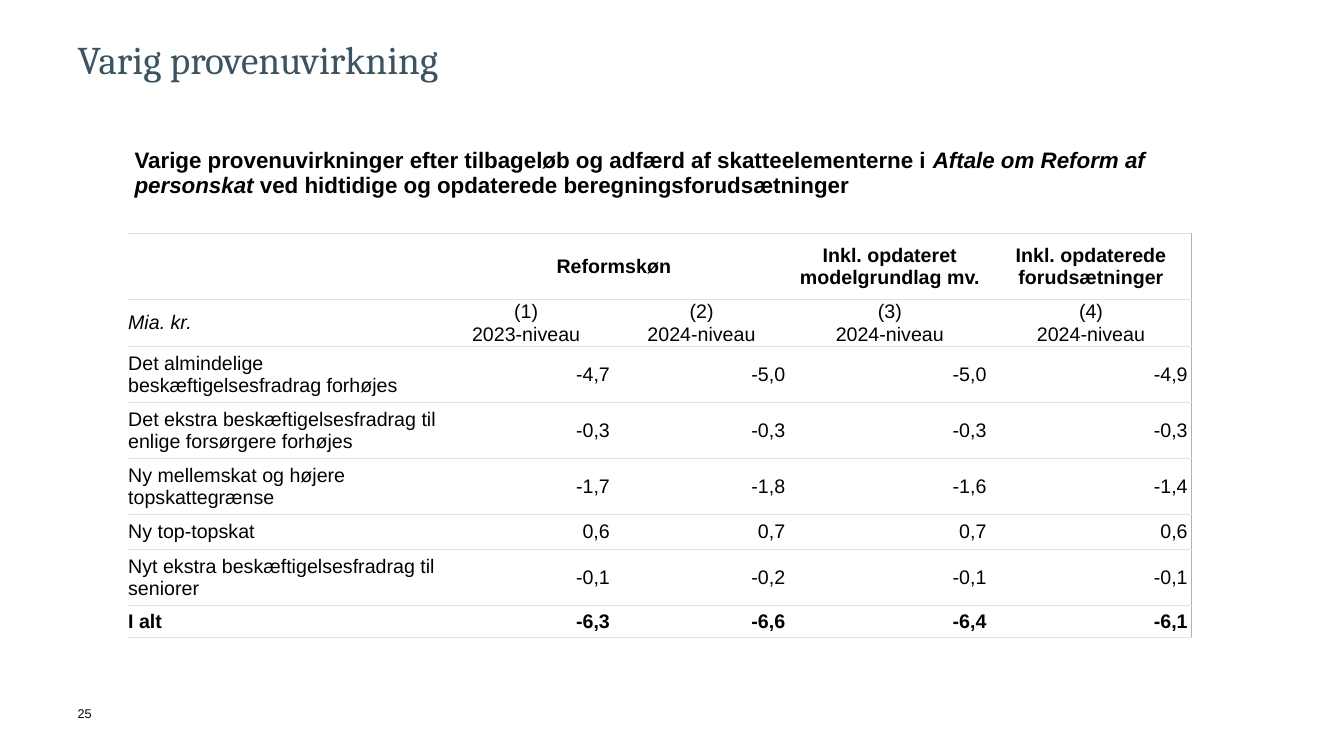
from dataclasses import dataclass

from lxml.etree import SubElement
from pptx import Presentation
from pptx.dml.color import RGBColor
from pptx.enum.text import MSO_ANCHOR as Anchor, PP_ALIGN as Align
from pptx.oxml.ns import qn
from pptx.util import Cm, Pt

NO_STYLE = "{2D5ABB26-0587-4C30-8999-92F81FD0307C}"


@dataclass(frozen=True)
class Theme:
    title_font: str = "Cambria"
    body_font: str = "Arial"
    title_color: str = "3B5463"
    text_color: str = "000000"
    rule_color: str = "E4E2D9"
    edge_color: str = "B5B1B1"
    title_size: int = 28
    heading_size: int = 16
    table_size: int = 14
    number_size: int = 9


class SlideBuilder:
    def __init__(self, slide, theme):
        self.slide = slide
        self.theme = theme

    def format_runs(self, paragraph, size, font=None, color=None, bold=False, italic=False):
        for run in paragraph.runs:
            run.font.name = font or self.theme.body_font
            run.font.size = Pt(size)
            run.font.bold = bold
            run.font.italic = italic
            run.font.color.rgb = RGBColor.from_string(color or self.theme.text_color)

    def text(self, left, top, width, height, text, size, font=None, color=None):
        frame = self.slide.shapes.add_textbox(Cm(left), Cm(top), Cm(width), Cm(height)).text_frame
        frame.word_wrap = True
        frame.margin_left = frame.margin_top = frame.margin_right = frame.margin_bottom = 0
        frame.text = text
        self.format_runs(frame.paragraphs[0], size, font, color)
        return frame.paragraphs[0]

    def table(self, left, top, widths, heights):
        shape = self.slide.shapes.add_table(
            len(heights), len(widths), Cm(left), Cm(top), Cm(sum(widths)), Cm(sum(heights)))
        table = shape.table
        table.first_row = table.horz_banding = False
        table._tbl.tblPr.find(qn("a:tableStyleId")).text = NO_STYLE
        for column, width in zip(table.columns, widths):
            column.width = Cm(width)
        for row, height in zip(table.rows, heights):
            row.height = Cm(height)
        return table

    def cell(self, cell, text, align=Align.LEFT, indent=0, bold=False, italic=False):
        cell.margin_left = cell.margin_top = cell.margin_right = cell.margin_bottom = 0
        cell.vertical_anchor = Anchor.MIDDLE
        cell.text_frame.text = text
        for paragraph in cell.text_frame.paragraphs:
            paragraph.alignment = align
            properties = paragraph._p.get_or_add_pPr()
            properties.set("marL", str(Cm(indent)))
            properties.set("marR", str(Cm(indent)))
            self.format_runs(paragraph, self.theme.table_size, bold=bold, italic=italic)

    def borders(self, cell, right_edge):
        sides = {"a:lnT": self.theme.rule_color, "a:lnB": self.theme.rule_color}
        if right_edge:
            sides = {"a:lnR": self.theme.edge_color, **sides}
        properties = cell._tc.get_or_add_tcPr()
        for side, color in sides.items():
            line = SubElement(properties, qn(side), w=str(Pt(1)))
            SubElement(SubElement(line, qn("a:solidFill")), qn("a:srgbClr"), val=color)
        cell.fill.background()

    def heading(self, left, top, width, height, parts):
        cell = self.table(left, top, [width], [height]).cell(0, 0)
        cell.margin_left = cell.margin_right = Cm(0.25)
        cell.margin_top = cell.margin_bottom = 0
        cell.fill.background()
        paragraph = cell.text_frame.paragraphs[0]
        paragraph._p.get_or_add_pPr().set("marL", str(Cm(0.4)))
        for text, _ in parts:
            paragraph.add_run().text = text
        self.format_runs(paragraph, self.theme.heading_size, bold=True)
        for run, (_, italic) in zip(paragraph.runs, parts):
            run.font.italic = italic

    def revenue_table(self, left, top, widths, heights, rows):
        table = self.table(left, top, widths, heights)
        last_row, last_column = len(rows) - 1, len(widths) - 1
        for r, row in enumerate(rows):
            for c, text in enumerate(row):
                if c == 0:
                    align, indent = Align.LEFT, 0
                else:
                    align, indent = (Align.CENTER if r < 2 else Align.RIGHT), 0.1
                cell = table.cell(r, c)
                self.cell(cell, text, align, indent,
                          bold=r in (0, last_row), italic=(r, c) == (1, 0))
                self.borders(cell, c == last_column)
        table.cell(0, 1).merge(table.cell(0, 2))


HEADING = [
    ("Varige provenuvirkninger efter tilbageløb og adfærd af skatteelementerne i ", False),
    ("Aftale om Reform af personskat", True),
    (" ved hidtidige og opdaterede beregningsforudsætninger", False),
]
REVENUE = [
    ["", "Reformskøn", "", "Inkl. opdateret modelgrundlag mv.", "Inkl. opdaterede forudsætninger"],
    ["Mia. kr.", "(1)\n2023-niveau", "(2)\n2024-niveau", "(3)\n2024-niveau", "(4)\n2024-niveau"],
    ["Det almindelige beskæftigelsesfradrag forhøjes", "-4,7", "-5,0", "-5,0", "-4,9"],
    ["Det ekstra beskæftigelsesfradrag til enlige forsørgere forhøjes",
     "-0,3", "-0,3", "-0,3", "-0,3"],
    ["Ny mellemskat og højere \vtopskattegrænse", "-1,7", "-1,8", "-1,6", "-1,4"],
    ["Ny top-topskat", "0,6", "0,7", "0,7", "0,6"],
    ["Nyt ekstra beskæftigelsesfradrag til seniorer", "-0,1", "-0,2", "-0,1", "-0,1"],
    ["I alt", "-6,3", "-6,6", "-6,4", "-6,1"],
]


def main():
    presentation = Presentation()
    presentation.slide_width, presentation.slide_height = Cm(33.87), Cm(19.05)
    theme = Theme()
    builder = SlideBuilder(presentation.slides.add_slide(presentation.slide_layouts[6]), theme)

    # Title and slide number
    title = builder.text(1.96, 1.02, 27.1, 2.59, "Varig provenuvirkning",
                         theme.title_size, theme.title_font, theme.title_color)
    title.line_spacing = 0.9
    builder.text(1.96, 17.78, 0.79, 0.76, "25", theme.number_size)

    # Table heading
    builder.heading(2.74, 3.73, 27.81, 1.6, HEADING)

    # Revenue table
    builder.revenue_table(3.23, 5.89, [7.82, 4.42, 4.42, 5.07, 5.07],
                          [1.66, 1.11, 1.41, 1.41, 1.41, 0.88, 1.41, 0.8], REVENUE)

    presentation.save("out.pptx")


if __name__ == "__main__":
    main()
